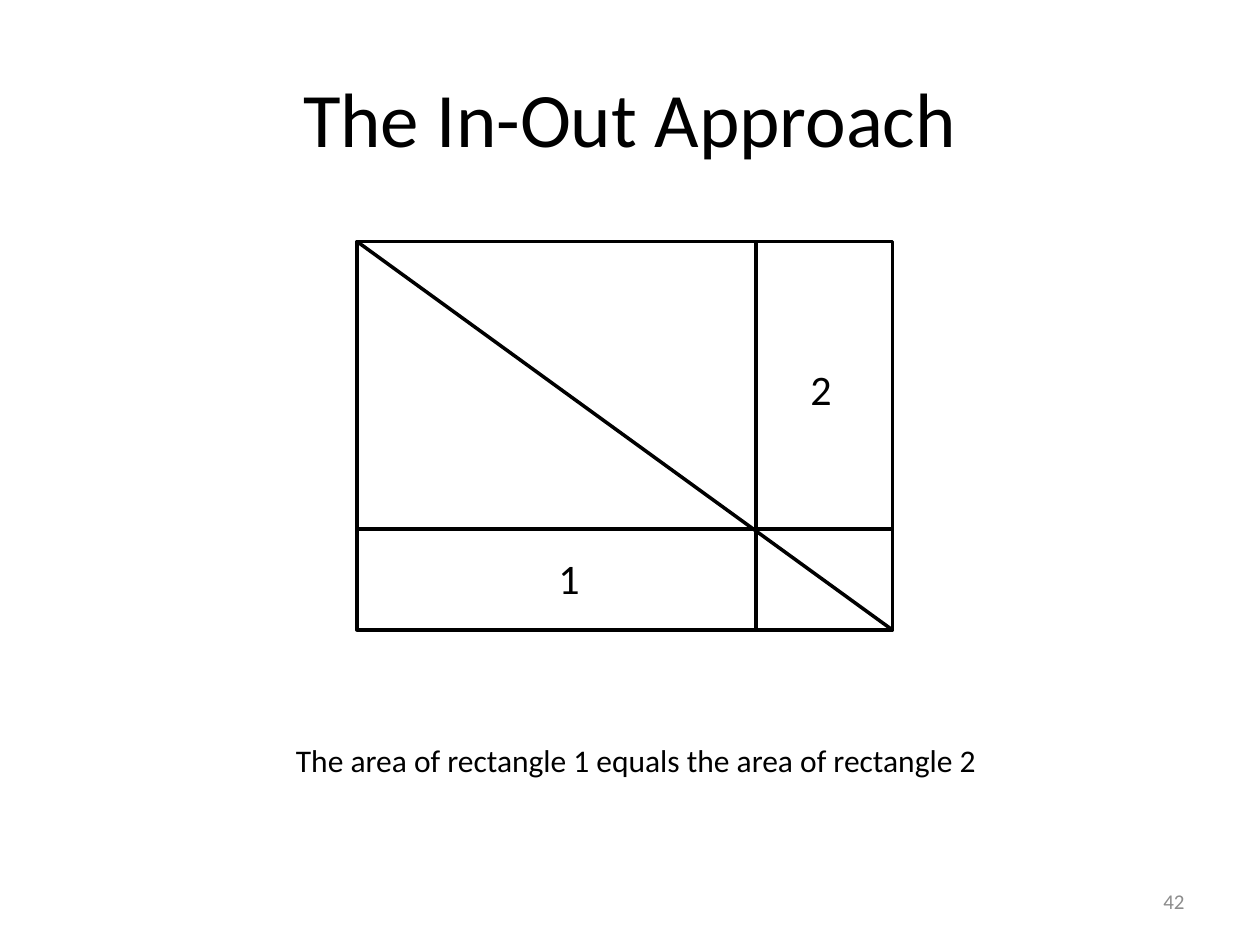
from dataclasses import dataclass

from lxml import etree
from pptx import Presentation
from pptx import util as u
from pptx.dml import color
from pptx.enum import shapes, text
from pptx.oxml import ns

PX = 7620


@dataclass(frozen=True)
class Theme:
    font: str = "Calibri"
    ink: str = "000000"
    muted: str = "8C8C8C"
    title: int = 44
    label: int = 24
    caption: int = 18
    number: int = 12
    stroke: int = 2


def emu(*lengths):
    return [u.Emu(length * PX) for length in lengths]


def rgb(value):
    return color.RGBColor.from_string(value)


class SlideBuilder:
    def __init__(self, slide, theme):
        self.slide = slide
        self.theme = theme
        self.target = slide.shapes

    def start_group(self):
        self.target = self.slide.shapes.add_group_shape().shapes

    def end_group(self):
        self.target = self.slide.shapes

    def add_words(self, frame, words, size, ink, align):
        paragraph = frame.paragraphs[0]
        paragraph.alignment = align
        run = paragraph.add_run()
        run.text = words
        run.font.name = self.theme.font
        run.font.size = u.Pt(size)
        run.font.color.rgb = rgb(ink)

    def outline(self, line):
        line.color.rgb = rgb(self.theme.ink)
        line.width = u.Pt(self.theme.stroke)

    def title(self, words, left, top, width, height):
        shape = self.slide.shapes.title
        shape.left, shape.top, shape.width, shape.height = emu(left, top, width, height)
        shape.text_frame.vertical_anchor = text.MSO_ANCHOR.MIDDLE
        self.add_words(shape.text_frame, words, self.theme.title, self.theme.ink,
                       text.PP_ALIGN.CENTER)

    def text(self, words, left, top, width, height, size, ink=None,
             align=text.PP_ALIGN.LEFT, anchor=text.MSO_ANCHOR.TOP, wrap=True):
        frame = self.target.add_textbox(*emu(left, top, width, height)).text_frame
        frame.word_wrap = wrap
        frame.vertical_anchor = anchor
        self.add_words(frame, words, size, ink or self.theme.ink, align)

    def rectangle(self, left, top, width, height):
        shape = self.target.add_shape(shapes.MSO_SHAPE.RECTANGLE,
                                      *emu(left, top, width, height))
        shape.shadow.inherit = False
        shape.fill.background()
        self.outline(shape.line)

    def line(self, x1, y1, x2, y2):
        connector = self.target.add_connector(shapes.MSO_CONNECTOR.STRAIGHT,
                                              *emu(x1, y1, x2, y2))
        self.outline(connector.line)
        properties = connector._element.find(ns.qn("p:spPr"))
        etree.SubElement(properties, ns.qn("a:effectLst"))


def main():
    presentation = Presentation()
    presentation.slide_width, presentation.slide_height = emu(1200, 900)
    theme = Theme()
    builder = SlideBuilder(
        presentation.slides.add_slide(presentation.slide_layouts[5]), theme)

    builder.title("The In-Out Approach", 60, 36, 1080, 150)
    builder.text("42", 860, 834, 280, 48, theme.number, theme.muted,
                 text.PP_ALIGN.RIGHT, text.MSO_ANCHOR.MIDDLE)

    left, top, width, height = 340, 230, 510, 370
    right, bottom = left + width, top + height
    split_x, split_y = 720, 504
    builder.start_group()
    builder.rectangle(left, top, width, height)
    builder.line(left, top, right, bottom)
    builder.line(split_x, top, split_x, bottom)
    builder.line(left, split_y, right, split_y)
    for label, x, y in (("1", 520, 520), ("2", 760, 340)):
        builder.text(label, x, y, 44, 60, theme.label, wrap=False)
    builder.end_group()

    builder.text("The area of rectangle 1 equals the area of rectangle 2",
                 270, 700, 690, 48, theme.caption)
    presentation.save("out.pptx")


if __name__ == "__main__":
    main()
